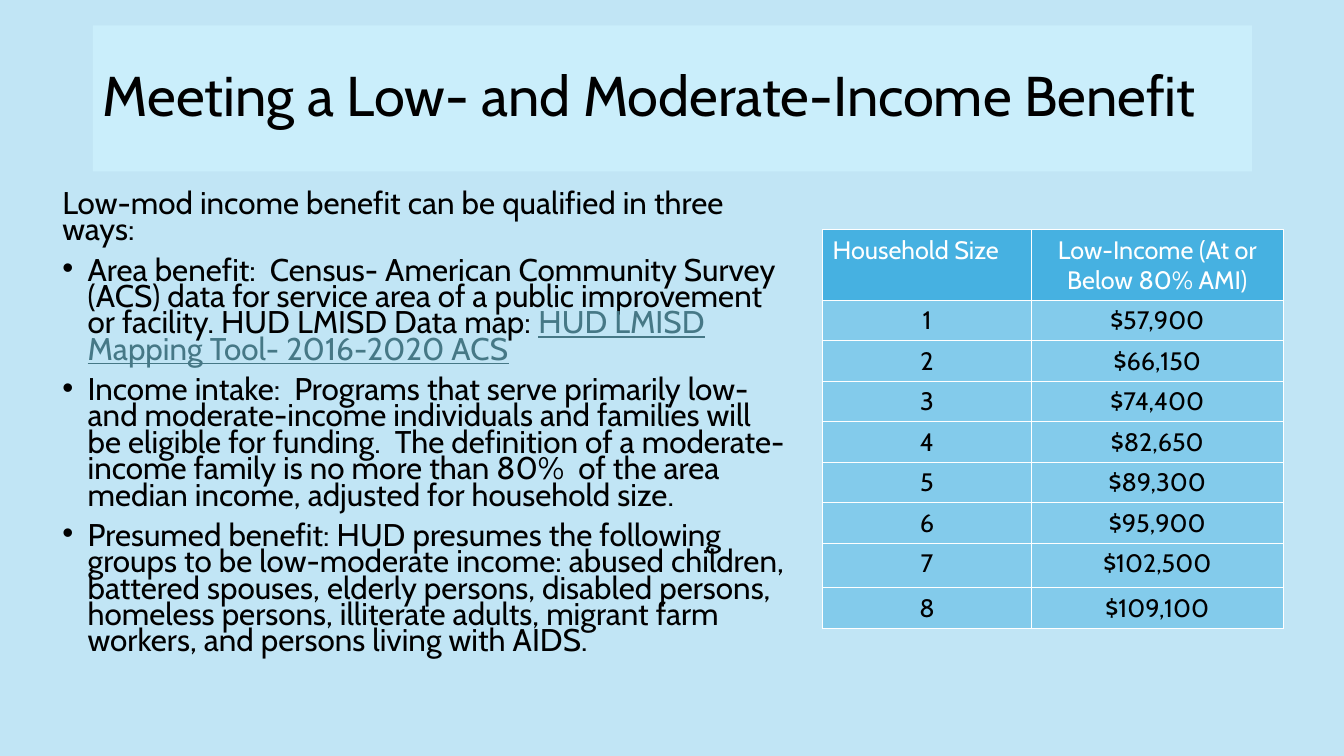
from dataclasses import dataclass

from lxml.etree import SubElement
from pptx import Presentation
from pptx.dml.color import RGBColor as Color
from pptx.enum.shapes import MSO_SHAPE as Shape
from pptx.enum.text import MSO_ANCHOR as Anchor, PP_ALIGN as Align
from pptx.oxml.ns import qn
from pptx.util import Cm, Pt


@dataclass(frozen=True)
class Theme:
    font: str = "Cabin"
    page: str = "C1E5F5"
    banner: str = "CAEEFB"
    header: str = "46B1E1"
    cell: str = "83CBEB"
    text: str = "000000"
    light: str = "FFFFFF"
    link: str = "467886"
    title_size: float = 40
    body_size: float = 22.4
    table_size: float = 18


THEME = Theme()
TITLE = "Meeting a Low- and Moderate-Income Benefit"
INTRO = "Low-mod income benefit can be qualified in three ways:"
LINK = "HUD LMISD Mapping Tool- 2016-2020 ACS"
WAYS = [
    ["Area benefit:  Census- American Community Survey (ACS) data for service area "
     "of a public improvement or facility. HUD LMISD Data map: ", LINK],
    ["Income intake:  Programs that serve primarily low-and moderate-income "
     "individuals and families will be eligible for funding.  The definition of a "
     "moderate-income family is no more than 80%  of the area median income, "
     "adjusted for household size."],
    ["Presumed benefit: HUD presumes the following groups to be low-moderate income: "
     "abused children, battered spouses, elderly persons, disabled persons, homeless "
     "persons, illiterate adults, migrant farm workers, and persons living with AIDS."],
]
HEADINGS = ["Household Size", "Low-Income (At or Below 80% AMI)"]
LIMITS = ["$57,900", "$66,150", "$74,400", "$82,650",
          "$89,300", "$95,900", "$102,500", "$109,100"]


def apply(target, values):
    for name, value in values.items():
        setattr(target, name, value)


def fill(target, color):
    target.fill.solid()
    target.fill.fore_color.rgb = Color.from_string(color)


def add_span(para, text, size, color=THEME.text, **extra):
    span = para.add_run()
    span.text = text
    apply(span.font, {"name": THEME.font, "size": Pt(size), "bold": False, **extra})
    span.font.color.rgb = Color.from_string(color)


def add_bullet(para):
    props = para._p.get_or_add_pPr()
    indent = Cm(0.64)
    props.set("marL", str(indent))
    props.set("indent", str(-indent))
    SubElement(props, qn("a:buFont")).set("typeface", "Arial")
    SubElement(props, qn("a:buChar")).set("char", "•")


def add_title(page):
    banner = page.shapes.add_shape(
        Shape.RECTANGLE, Cm(2.34), Cm(0.64), Cm(29.21), Cm(3.68))
    banner.shadow.inherit = False
    fill(banner, THEME.banner)
    banner.line.fill.background()
    apply(banner.text_frame, {"word_wrap": True, "vertical_anchor": Anchor.MIDDLE})
    para = banner.text_frame.paragraphs[0]
    apply(para, {"alignment": Align.LEFT, "line_spacing": 0.9})
    add_span(para, TITLE, THEME.title_size)


def add_body(page):
    box = page.shapes.add_textbox(Cm(1.32), Cm(4.75), Cm(18.9), Cm(13.21))
    frame = box.text_frame
    frame.word_wrap = True
    intro = frame.paragraphs[0]
    intro.line_spacing = 0.7
    add_span(intro, INTRO, THEME.body_size)
    for parts in WAYS:
        para = frame.add_paragraph()
        apply(para, {"line_spacing": 0.7, "space_before": Pt(10)})
        add_bullet(para)
        for part in parts:
            style = {"color": THEME.link, "underline": True} if part == LINK else {}
            add_span(para, part, THEME.body_size, **style)


def add_borders(cell):
    props = cell._tc.get_or_add_tcPr()
    for side in ("lnL", "lnR", "lnT", "lnB"):
        line = SubElement(props, qn(f"a:{side}"), w=str(Pt(1)))
        paint = SubElement(line, qn("a:solidFill"))
        SubElement(paint, qn("a:srgbClr")).set("val", THEME.light)


def fill_cell(cell, text, background, color, alignment):
    add_borders(cell)
    fill(cell, background)
    para = cell.text_frame.paragraphs[0]
    para.alignment = alignment
    add_span(para, text, THEME.table_size, color)


def add_limits(page):
    rows = [HEADINGS] + [[str(size), limit] for size, limit in enumerate(LIMITS, 1)]
    widths = [Cm(5.26), Cm(6.35)]
    heights = [Cm(1.75)] + [Cm(1.02)] * 6 + [Cm(1.12), Cm(1.02)]
    table = page.shapes.add_table(
        len(rows), len(widths), Cm(20.73), Cm(5.79), sum(widths), sum(heights)).table
    apply(table, {"first_row": False, "horz_banding": False})
    for column, width in zip(table.columns, widths):
        column.width = width
    for row, height in zip(table.rows, heights):
        row.height = height
    for r, texts in enumerate(rows):
        colors = (THEME.cell, THEME.text) if r else (THEME.header, THEME.light)
        for c, text in enumerate(texts):
            alignment = Align.CENTER if r or c else Align.LEFT
            fill_cell(table.cell(r, c), text, *colors, alignment)


def main():
    deck = Presentation()
    apply(deck, {"slide_width": Cm(33.87), "slide_height": Cm(19.05)})
    page = deck.slides.add_slide(deck.slide_layouts[6])
    fill(page.background, THEME.page)
    add_title(page)
    add_body(page)
    add_limits(page)
    deck.save("out.pptx")


if __name__ == "__main__":
    main()
